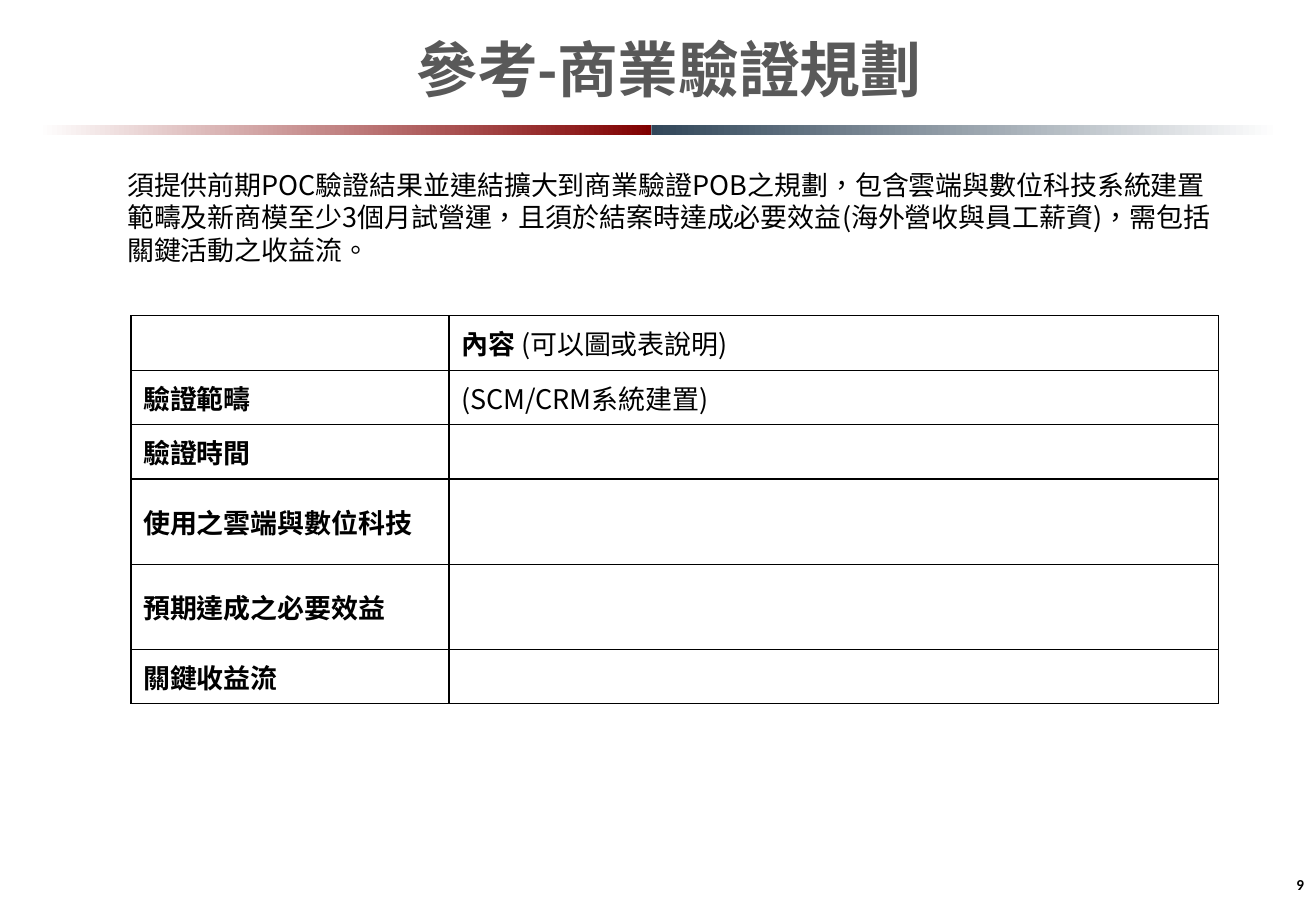
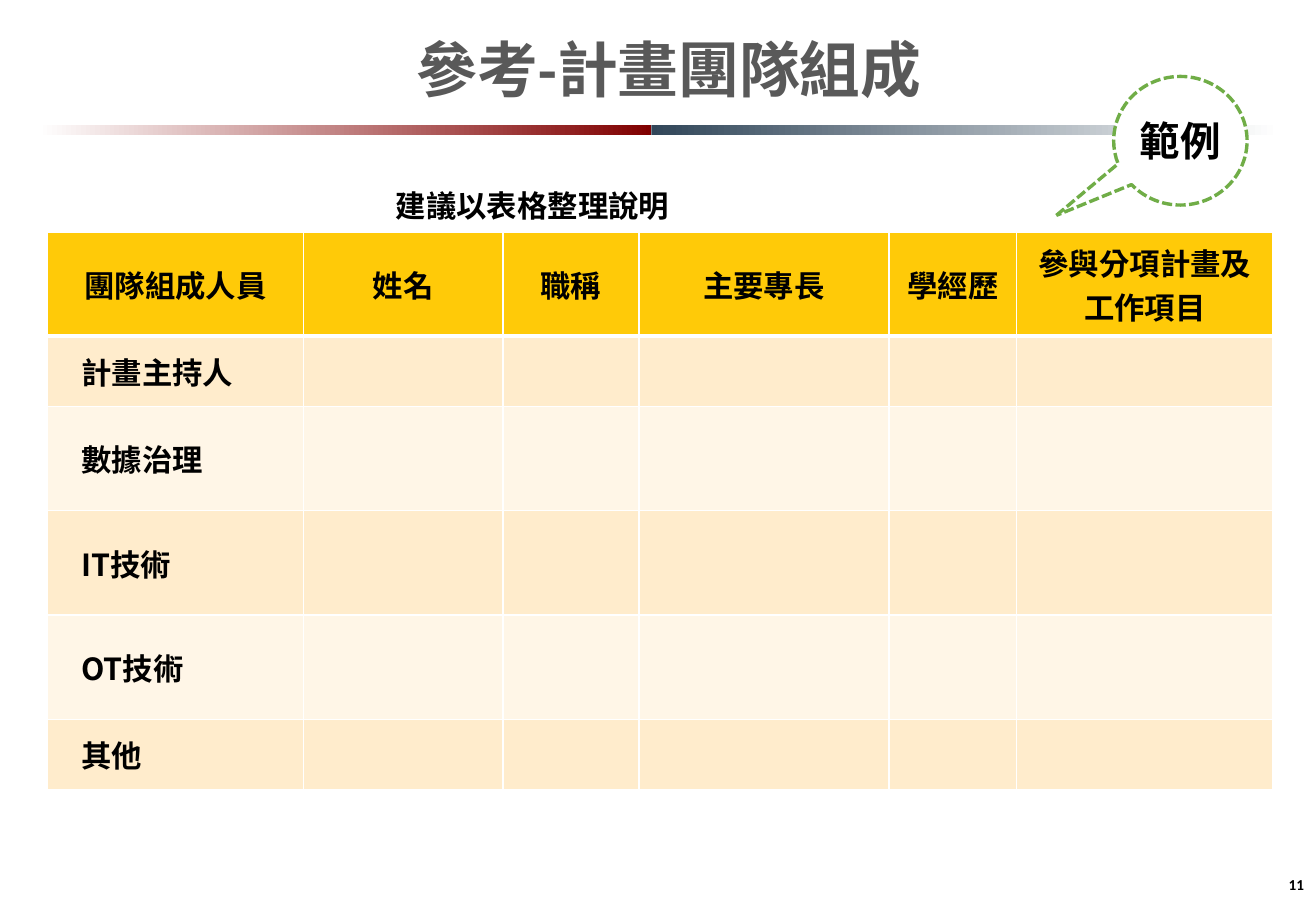
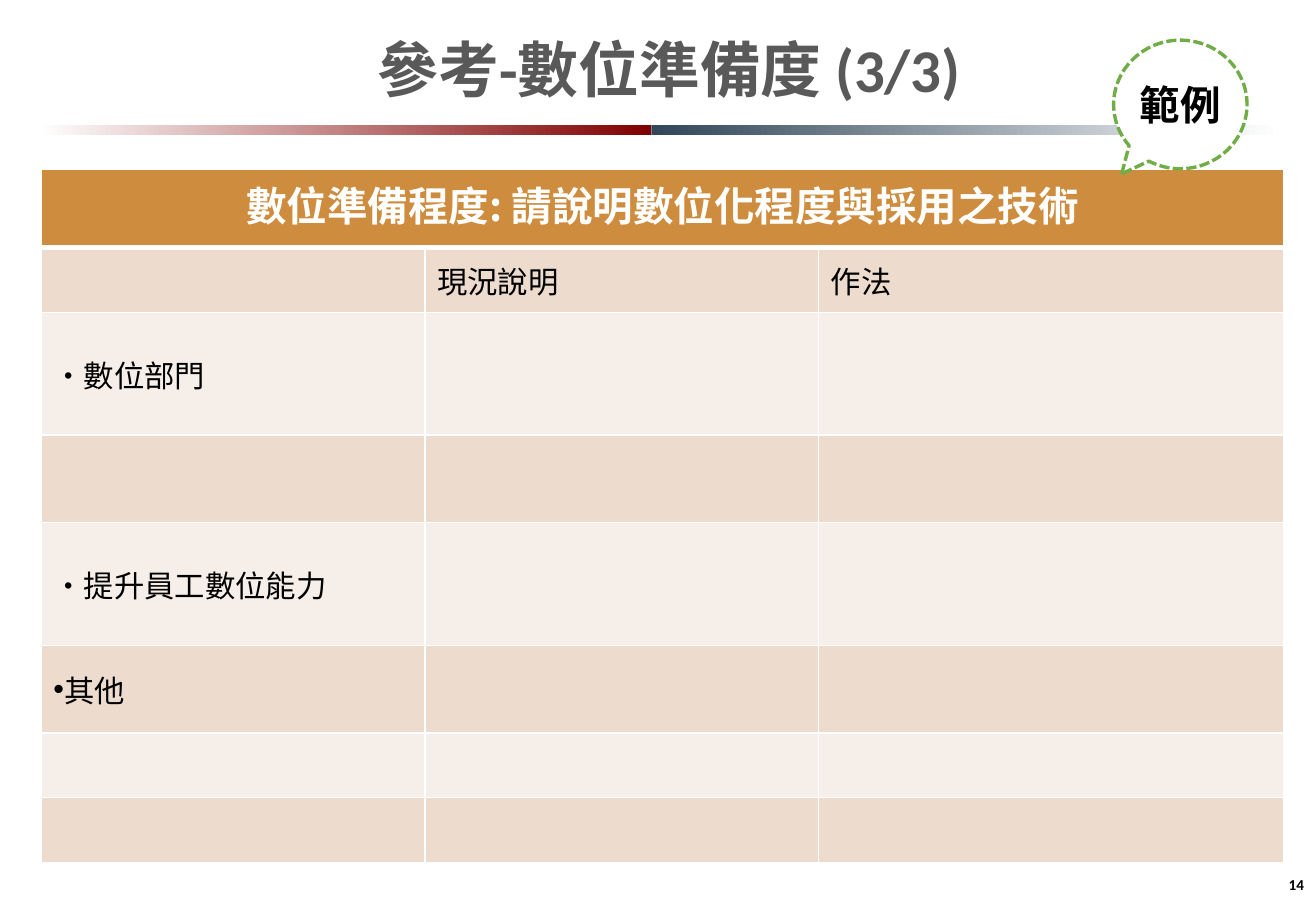
import lxml.etree
import pptx
import pptx.dml.color
import pptx.enum.dml
import pptx.enum.shapes
import pptx.enum.text
import pptx.oxml
import pptx.oxml.ns
import pptx.util

Cm, Pt = pptx.util.Cm, pptx.util.Pt
rgb = pptx.dml.color.RGBColor.from_string
qn = pptx.oxml.ns.qn
Align = pptx.enum.text.PP_ALIGN
Anchor = pptx.enum.text.MSO_ANCHOR
Shape = pptx.enum.shapes.MSO_SHAPE

CJK, LATIN = "Noto Sans CJK SC", "Calibri"
BLACK, WHITE, TITLE_GRAY, GREEN = "000000", "FFFFFF", "595959", "70AD47"
RED, NAVY = "800000", "314659"


def style_text(frame, size, color=BLACK, bold=False, font=CJK, align=Align.LEFT):
    """Format every run, giving Latin and East Asian text the same font."""
    for paragraph in frame.paragraphs:
        paragraph.alignment = align
        for run in paragraph.runs:
            run.font.size = Pt(size)
            run.font.bold = bold
            run.font.color.rgb = rgb(color)
            run.font.name = font
            properties = run.font._element
            properties.set("lang", "zh-TW")
            lxml.etree.SubElement(properties, qn("a:ea"), typeface=font)


def add_grid(slide, left, top, widths, heights, fills, line, line_width, rule_width):
    """Add a table with one fill per row and a rule of its own under the first row."""
    table = slide.shapes.add_table(
        len(heights), len(widths), Cm(left), Cm(top), Cm(sum(widths)), Cm(sum(heights))
    ).table
    table.first_row = table.horz_banding = False
    for column, width in zip(table.columns, widths):
        column.width = Cm(width)
    for r, (row, height, fill) in enumerate(zip(table.rows, heights, fills)):
        row.height = Cm(height)
        for cell in row.cells:
            cell.vertical_anchor = Anchor.MIDDLE
            if fill:
                cell.fill.solid()
                cell.fill.fore_color.rgb = rgb(fill)
            else:
                cell.fill.background()
            for i, side in enumerate(("lnL", "lnR", "lnT", "lnB")):
                on_rule = (r, side) in ((0, "lnB"), (1, "lnT"))
                width = Pt(rule_width if on_rule else line_width)
                border = lxml.etree.Element(qn("a:" + side), w=str(width))
                solid = lxml.etree.SubElement(border, qn("a:solidFill"))
                lxml.etree.SubElement(solid, qn("a:srgbClr"), val=line)
                cell._tc.get_or_add_tcPr().insert(i, border)
    return table


presentation = pptx.Presentation()
presentation.slide_width, presentation.slide_height = Cm(27.52), Cm(19.05)

# Title, two-part gradient band and page number on every slide
slides = []
for heading, number in (
    ("參考-商業驗證規劃", "9"),
    ("參考-計畫團隊組成", "11"),
    ("參考-數位準備度 (3/3)", "14"),
):
    slide = presentation.slides.add_slide(presentation.slide_layouts[5])
    slides.append(slide)
    for left, width, start, end in ((0.79, 12.83, WHITE, RED), (13.62, 13.13, NAVY, WHITE)):
        band = slide.shapes.add_shape(Shape.RECTANGLE, Cm(left), Cm(2.62), Cm(width), Cm(0.2))
        band.shadow.inherit = False
        band.line.fill.background()
        band.fill.gradient()
        band.fill.gradient_angle = 0
        for stop, position, color in zip(band.fill.gradient_stops, (0, 1), (start, end)):
            stop.position = position
            stop.color.rgb = rgb(color)

    title = slide.shapes.title
    title.left, title.top, title.width, title.height = Cm(3.3), Cm(0.53), Cm(21.39), Cm(2.31)
    title.text_frame.text = heading
    title.text_frame.auto_size = pptx.enum.text.MSO_AUTO_SIZE.NONE
    title.text_frame.vertical_anchor = Anchor.TOP
    style_text(title.text_frame, 36, TITLE_GRAY, True, LATIN, Align.CENTER)

    page = slide.shapes.add_textbox(Cm(21.34), Cm(17.98), Cm(6.18), Cm(1.02)).text_frame
    page.word_wrap = True
    page.vertical_anchor = Anchor.MIDDLE
    page.text = number
    style_text(page, 9, bold=True, font=LATIN, align=Align.RIGHT)

validation_slide, team_slide, readiness_slide = slides

# Lead-in text above the first two tables
for slide, left, top, width, height, size, bold, words in (
    (validation_slide, 2.41, 3.4, 23.52, 2.31, 16, False,
     "須提供前期POC驗證結果並連結擴大到商業驗證POB之規劃，包含雲端與數位科技系統建置範疇及新商模"
     "至少3個月試營運，且須於結案時達成必要效益(海外營收與員工薪資)，需包括關鍵活動之收益流。"),
    (team_slide, 8.03, 3.78, 19.4, 1.02, 18, True, "建議以表格整理說明"),
):
    lead = slide.shapes.add_textbox(Cm(left), Cm(top), Cm(width), Cm(height)).text_frame
    lead.word_wrap = True
    lead.text = words
    lead.paragraphs[0].line_spacing = Pt(size * 1.2)
    style_text(lead, size, bold=bold)

# Validation plan
plan = add_grid(validation_slide, 2.74, 6.6, (6.65, 16.1),
                (1.14, 1.14, 1.14, 1.78, 1.78, 1.14), [None] * 6, BLACK, 0.75, 0.75)
topics = ("驗證範疇", "驗證時間", "使用之雲端與數位科技", "預期達成之必要效益", "關鍵收益流")
for r, topic in enumerate(topics, 1):
    plan.cell(r, 0).text_frame.text = topic
    style_text(plan.cell(r, 0).text_frame, 16, bold=True)
content = plan.cell(0, 1).text_frame
for part in ("內容 ", "(可以圖或表說明)"):
    content.paragraphs[0].add_run().text = part
style_text(content, 16, bold=True)
content.paragraphs[0].runs[1].font.bold = False
scope = plan.cell(1, 1).text_frame
scope.text = "(SCM/CRM系統建置)"
style_text(scope, 16)

# Project team
cream, pale_cream = "FFECCC", "FFF6E7"
team = add_grid(team_slide, 0.99, 4.85, (5.36, 4.17, 2.84, 5.23, 2.67, 5.36),
                (2.18, 1.47, 2.18, 2.18, 2.18, 1.47),
                ("FFCA08", cream, pale_cream, cream, pale_cream, cream), WHITE, 1, 3)
headers = ("團隊組成人員", "姓名", "職稱", "主要專長", "學經歷", "參與分項計畫及\n工作項目")
roles = ("計畫主持人", "數據治理", "IT技術", "OT技術", "其他")
entries = [(0, c, words, 0.05, Align.CENTER) for c, words in enumerate(headers)]
entries += [(r, 0, words, 0.71, Align.LEFT) for r, words in enumerate(roles, 1)]
for r, c, words, indent, align in entries:
    cell = team.cell(r, c)
    cell.margin_left, cell.margin_right = Cm(indent), Cm(0.05)
    cell.margin_top = cell.margin_bottom = 0
    cell.text_frame.text = words
    style_text(cell.text_frame, 18, bold=True, align=align)

# Digital readiness
tan, pale_tan = "EDDBCE", "F6EEE8"
readiness = add_grid(readiness_slide, 0.86, 3.53, (8.03, 8.23, 9.73),
                     (1.65, 1.35, 2.57, 1.83, 2.57, 1.83, 1.35, 1.35),
                     ["CE8D3E"] + [tan, pale_tan] * 3 + [tan], WHITE, 1, 3)
banner = readiness.cell(0, 0)
banner.merge(readiness.cell(0, 2))
banner.vertical_anchor = Anchor.TOP
banner.text_frame.text = "數位準備程度: 請說明數位化程度與採用之技術"
style_text(banner.text_frame, 24, WHITE, True, align=Align.CENTER)
for r, c, words in (
    (1, 1, "現況說明"), (1, 2, "作法"),
    (2, 0, "•數位部門"), (4, 0, "•提升員工數位能力"), (5, 0, "其他"),
):
    frame = readiness.cell(r, c).text_frame
    frame.text = words
    style_text(frame, 18)
other = readiness.cell(5, 0).text_frame.paragraphs[0]._p.get_or_add_pPr()
other.set("marL", str(Cm(0.23)))
other.set("indent", str(-Cm(0.23)))
lxml.etree.SubElement(other, qn("a:buFont"), typeface="Arial")
lxml.etree.SubElement(other, qn("a:buChar"), char="•")

# "Example" callouts
for slide, top, tip in ((team_slide, 1.6, (-0.93, 0.58)), (readiness_slide, 0.84, (-0.44, 0.54))):
    example = slide.shapes.add_shape(
        Shape.OVAL_CALLOUT, Cm(23.29), Cm(top), Cm(2.79), Cm(2.69))
    example.adjustments[0], example.adjustments[1] = tip
    example.shadow.inherit = False
    example.fill.solid()
    example.fill.fore_color.rgb = rgb(WHITE)
    example.line.color.rgb = rgb(GREEN)
    example.line.width = Pt(2)
    example.line.dash_style = pptx.enum.dml.MSO_LINE.SQUARE_DOT
    frame = example.text_frame
    frame.margin_left = frame.margin_right = Cm(0.05)
    frame.margin_top = frame.margin_bottom = Cm(0.03)
    frame.vertical_anchor = Anchor.MIDDLE
    frame.text = "範例"
    style_text(frame, 24, bold=True, align=Align.CENTER)

presentation.save("out.pptx")
